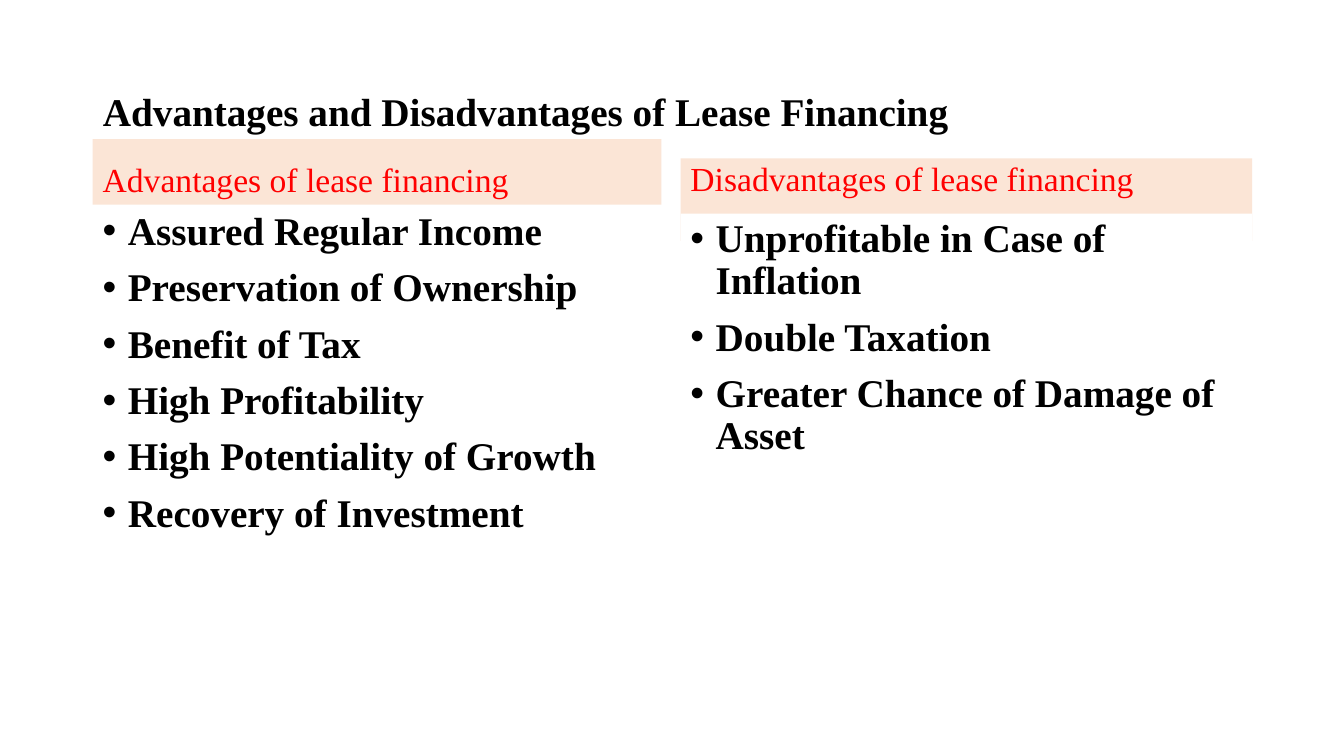
from pptx import Presentation
from pptx.dml.color import RGBColor
from pptx.enum.text import MSO_ANCHOR as Anchor, PP_ALIGN as Align
from pptx.oxml.ns import qn
from pptx.util import Inches, Pt
from lxml import etree

COLORS = {"text": "000000", "heading": "FF0000", "band": "FBE5D6", "panel": "FFFFFF"}


def write_text(shape, lines, size, color, bold=False, bullet=False,
               anchor=Anchor.TOP, bottom=0.05, space=0):
    frame = shape.text_frame
    frame.word_wrap = True
    frame.vertical_anchor = anchor
    frame.margin_bottom = Inches(bottom)
    frame.text = "\n".join(lines)
    for paragraph in frame.paragraphs:
        paragraph.alignment = Align.LEFT
        paragraph.line_spacing = 0.9
        paragraph.space_before = Pt(space)
        font = paragraph.runs[0].font
        font.name = "Times New Roman"
        font.size = Pt(size)
        font.bold = bold
        font.color.rgb = RGBColor.from_string(COLORS[color])
        if bullet:
            properties = paragraph._p.get_or_add_pPr()
            properties.set("marL", str(Inches(0.25)))
            properties.set("indent", str(-Inches(0.25)))
            etree.SubElement(properties, qn("a:buFont")).set("typeface", "Arial")
            etree.SubElement(properties, qn("a:buChar")).set("char", "•")


def add_panel(box, fill):
    shape = slide.shapes.add_textbox(*map(Inches, box))
    shape.fill.solid()
    shape.fill.fore_color.rgb = RGBColor.from_string(COLORS[fill])
    return shape


presentation = Presentation()
presentation.slide_width = Inches(13.33)
presentation.slide_height = Inches(7.5)
slide = presentation.slides.add_slide(presentation.slide_layouts[5])

# Title
title = slide.shapes.title
title.left, title.top, title.width, title.height = map(Inches, (0.92, 0.4, 11.5, 1.45))
write_text(title, ["Advantages and Disadvantages of Lease Financing"], 28, "text",
           bold=True, anchor=Anchor.MIDDLE)

# Two columns: heading, heading box, space below the heading, list box, points
columns = [
    ("Advantages of lease financing", (0.92, 1.38, 5.64, 0.65), 0.05,
     (0.92, 2.05, 5.64, 3.71),
     ["Assured Regular Income", "Preservation of Ownership", "Benefit of Tax",
      "High Profitability", "High Potentiality of Growth", "Recovery of Investment"]),
    ("Disadvantages of lease financing", (6.75, 1.57, 5.67, 0.82), 0.42,
     (6.75, 2.12, 5.67, 3.62),
     ["Unprofitable in Case of Inflation", "Double Taxation",
      "Greater Chance of Damage of Asset"]),
]
for heading, heading_box, bottom, list_box, points in columns:
    write_text(add_panel(heading_box, "band"), [heading], 24, "heading",
               anchor=Anchor.BOTTOM, bottom=bottom)
    write_text(add_panel(list_box, "panel"), points, 28, "text",
               bold=True, bullet=True, space=10)

presentation.save("out.pptx")
